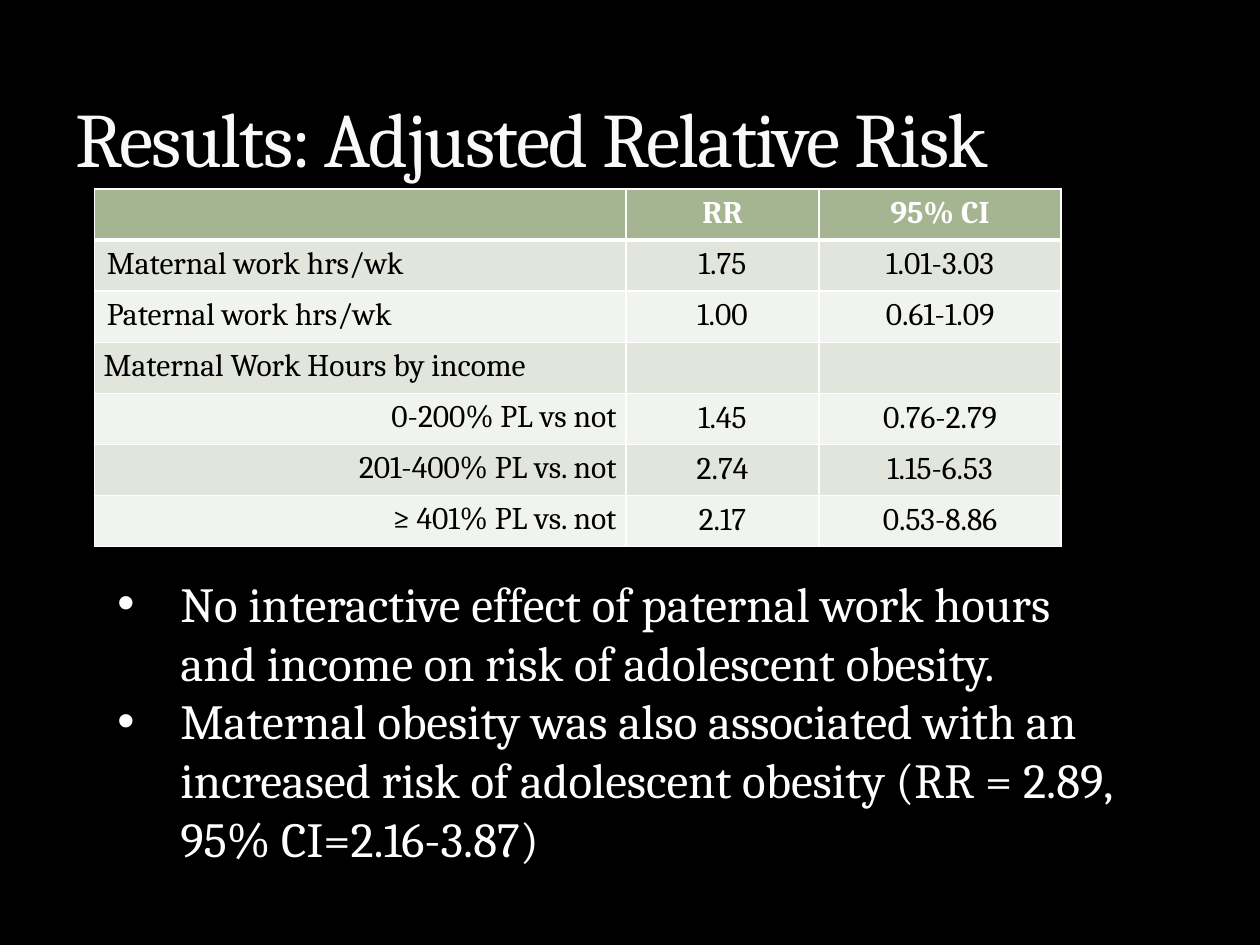
from lxml.etree import SubElement
from pptx import Presentation
from pptx.dml.color import RGBColor
from pptx.enum.text import MSO_ANCHOR as Anchor, MSO_AUTO_SIZE as AutoSize, PP_ALIGN as Align
from pptx.oxml import parse_xml
from pptx.oxml.ns import nsdecls, qn
from pptx.util import Cm, Pt

COLORS = {
    "background": "000000",
    "title": "F9F9F9",
    "light": "FFFFFF",
    "dark": "000000",
    "header": "A5B592",
    "odd_row": "E1E5DC",
    "even_row": "F0F3EE",
}
HEADINGS = ("", "RR", "95% CI")
WORK_HOURS = [
    ("Maternal work hrs/wk", "1.75", "1.01-3.03"),
    ("Paternal work hrs/wk", "1.00", "0.61-1.09"),
]
INCOME_HEADING = ("Maternal Work Hours by income", "", "")
INCOME_LEVELS = [
    ("0-200% PL vs not", "1.45", "0.76-2.79"),
    ("201-400% PL vs. not", "2.74", "1.15-6.53"),
    ("≥ 401% PL vs. not", "2.17", "0.53-8.86"),
]
FINDINGS = [
    "No interactive effect of paternal work hours and income on risk of adolescent obesity.",
    "Maternal obesity was also associated with an increased risk of adolescent obesity "
    "(RR = 2.89, 95% CI=2.16-3.87)",
]


def rgb(name):
    return RGBColor.from_string(COLORS[name])


class RiskSlide:
    """Holds the style and the current slide."""

    font = "Cambria"

    def __init__(self, presentation):
        self.slide = presentation.slides.add_slide(presentation.slide_layouts[1])
        fill = self.slide.background.fill
        fill.solid()
        fill.fore_color.rgb = rgb("background")

    def style(self, paragraph, size, color, bold=False):
        for run in paragraph.runs:
            run.font.name = self.font
            run.font.size = Pt(size)
            run.font.bold = bold
            run.font.color.rgb = rgb(color)

    def place(self, placeholder, left, top, width, height):
        placeholder.left, placeholder.top = Cm(left), Cm(top)
        placeholder.width, placeholder.height = Cm(width), Cm(height)
        placeholder.text_frame.auto_size = AutoSize.NONE
        return placeholder.text_frame

    def title(self, text, *box):
        frame = self.place(self.slide.shapes.title, *box)
        frame.text = text
        frame.vertical_anchor = Anchor.BOTTOM
        heading = frame.paragraphs[0]
        heading.alignment = Align.LEFT
        self.style(heading, 44, "title")
        heading.runs[0].font._element.set("spc", "-100")

    def bullets(self, items, *box):
        frame = self.place(self.slide.placeholders[1], *box)
        frame.text = "\n".join(items)
        frame.vertical_anchor = Anchor.TOP
        for item in frame.paragraphs:
            item.space_before = Pt(0)
            self.style(item, 28, "light")
            properties = item._p.get_or_add_pPr()
            properties.set("marL", str(Cm(1.27)))
            properties.set("indent", str(-Cm(1.27)))
            SubElement(properties, qn("a:buFont"), typeface="Arial")
            SubElement(properties, qn("a:buChar"), char="•")

    def borders(self, cell, top=1, bottom=1):
        widths = {"lnL": 1, "lnR": 1, "lnT": top, "lnB": bottom}
        for position, (side, width) in enumerate(widths.items()):
            cell._tc.get_or_add_tcPr().insert(position, parse_xml(
                f'<a:{side} {nsdecls("a")} w="{Pt(width)}"><a:solidFill>'
                f'<a:srgbClr val="{COLORS["light"]}"/></a:solidFill></a:{side}>'))

    def cell(self, cell, text, row, column):
        is_header = row == 0
        fill = "header" if is_header else "odd_row" if row % 2 else "even_row"
        cell.fill.solid()
        cell.fill.fore_color.rgb = rgb(fill)
        self.borders(cell, top=3 if row == 1 else 1, bottom=3 if is_header else 1)
        cell.text = text
        paragraph = cell.text_frame.paragraphs[0]
        paragraph.alignment = Align.CENTER if column else Align.LEFT
        self.style(paragraph, 18, "light" if is_header else "dark", is_header)

    def income_label(self, cell, alignment):
        cell.margin_left = cell.margin_right = Cm(0.19)
        cell.margin_top = cell.margin_bottom = 0
        label = cell.text_frame.paragraphs[0]
        label.line_spacing = 1.15
        label.alignment = alignment

    def table(self, rows, left, top, column_widths, row_height):
        table = self.slide.shapes.add_table(
            len(rows), len(column_widths), Cm(left), Cm(top),
            Cm(sum(column_widths)), Cm(row_height * len(rows))).table
        for column, width in zip(table.columns, column_widths):
            column.width = Cm(width)
        for r, values in enumerate(rows):
            table.rows[r].height = Cm(row_height)
            for c, text in enumerate(values):
                self.cell(table.cell(r, c), text, r, c)
        return table


def main():
    presentation = Presentation()
    presentation.slide_width, presentation.slide_height = Cm(25.4), Cm(19.05)
    slide = RiskSlide(presentation)
    slide.title("Results: Adjusted Relative Risk", 1.27, 0.43, 22.86, 3.38)
    slide.bullets(FINDINGS, 2.11, 11.43, 20.95, 6.25)

    rows = [HEADINGS, *WORK_HOURS, INCOME_HEADING, *INCOME_LEVELS]
    risks = slide.table(rows, 1.9, 3.81, (10.72, 3.89, 4.88), 1.03)
    income_row = rows.index(INCOME_HEADING)
    slide.income_label(risks.cell(income_row, 0), Align.LEFT)
    for row in range(income_row + 1, len(rows)):
        slide.income_label(risks.cell(row, 0), Align.RIGHT)
    presentation.save("out.pptx")


if __name__ == "__main__":
    main()
